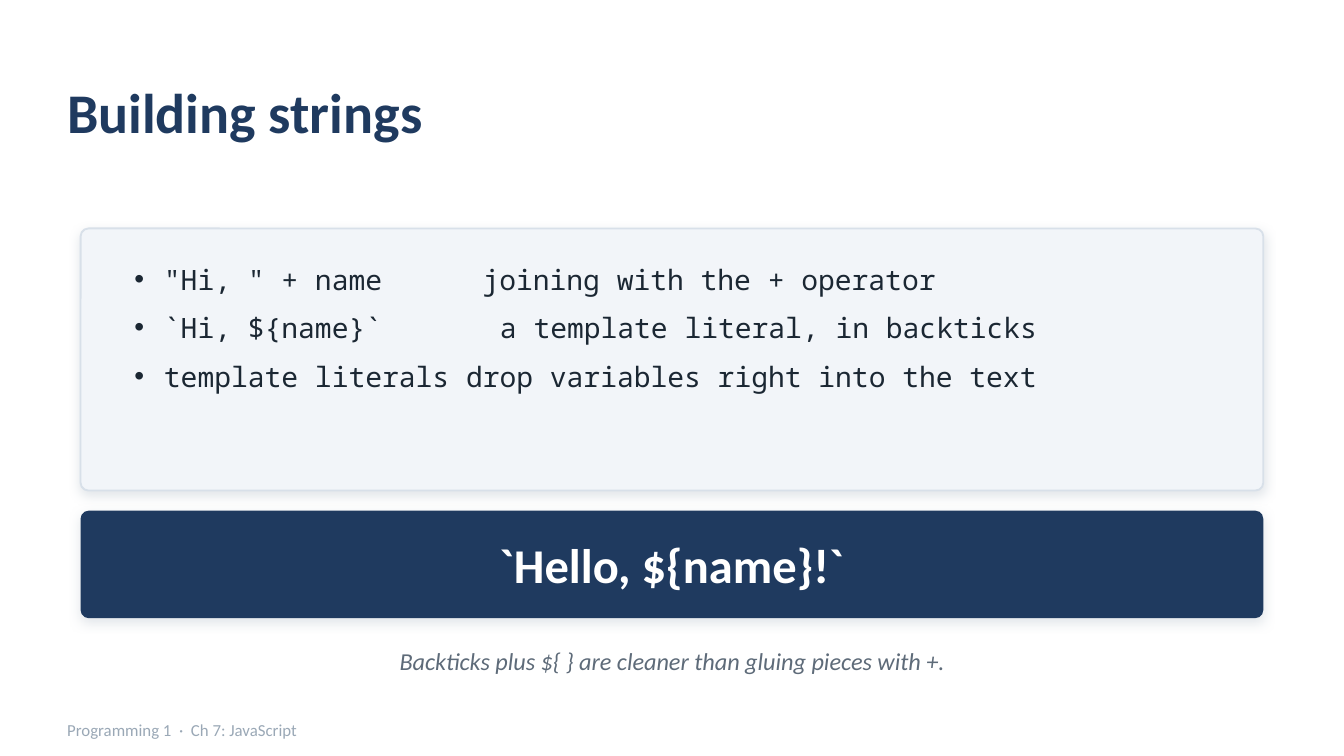
"""Build the slide on joining strings and template literals."""
from dataclasses import dataclass, field

from lxml import etree
from pptx import Presentation
from pptx import util as u
from pptx.dml import color
from pptx.enum import shapes, text
from pptx.oxml import ns

COLORS = {
    "navy": "1F3A5F",
    "panel": "F2F5F9",
    "edge": "D8E0E9",
    "ink": "1B2733",
    "white": "FFFFFF",
    "slate": "5E6B79",
    "mist": "9AA8B6",
}
SLIDE_WIDTH = 10
SLIDE_HEIGHT = SLIDE_WIDTH * 9 / 16
LEFT, WIDTH = 0.6, 8.8
INDENT = 0.22


@dataclass
class Area:
    left: float
    top: float
    width: float
    height: float

    def lengths(self) -> list:
        return [u.Inches(n) for n in (self.left, self.top, self.width, self.height)]


@dataclass
class Style:
    size: int
    color: str
    name: str = "Calibri"
    bold: bool = False
    italic: bool = False


@dataclass
class Panel:
    area: Area
    fill: str
    corner: float
    edge: str = ""


@dataclass
class Label:
    words: str
    area: Area
    style: Style
    align: text.PP_ALIGN = text.PP_ALIGN.LEFT


@dataclass
class Bullet:
    words: str
    tabs: list = field(default_factory=list)


TITLE = Label("Building strings", Area(0.5, 0.4, 9, 0.85), Style(30, "navy", bold=True))
LIST_AREA = Area(0.9, 1.9, 8.2, 1.6)
CODE = Style(15, "ink", "Noto Sans Mono")
BULLETS = [
    Bullet('"Hi, " + name\tjoining with the + operator', [2.59]),
    Bullet("`Hi, ${name}`\ta template literal, in backticks", [2.72]),
    Bullet("template literals drop variables right into the text"),
]
PANELS = [
    Panel(Area(LEFT, 1.7, WIDTH, 1.95), "panel", 0.03, "edge"),
    Panel(Area(LEFT, 3.8, WIDTH, 0.8), "navy", 0.075),
]
LABELS = [
    Label("`Hello, ${name}!`", Area(LEFT, 3.83, WIDTH, 0.74),
          Style(26, "white", bold=True), text.PP_ALIGN.CENTER),
    Label("Backticks plus ${ } are cleaner than gluing pieces with +.",
          Area(LEFT, 4.72, WIDTH, 0.4), Style(13, "slate", italic=True), text.PP_ALIGN.CENTER),
    Label("Programming 1  ·  Ch 7: JavaScript", Area(0.5, 5.3, 8, 0.26), Style(9, "mist")),
]


def rgb(name: str) -> color.RGBColor:
    return color.RGBColor.from_string(COLORS[name])


def assign(target, values: dict) -> None:
    for key, value in values.items():
        setattr(target, key, value)


def place(box, area: Area) -> None:
    assign(box, dict(zip(("left", "top", "width", "height"), area.lengths())))


def add_span(para, words: str, style: Style) -> None:
    span = para.add_run()
    span.text = words
    assign(span.font, {"size": u.Pt(style.size), "name": style.name,
                       "bold": style.bold, "italic": style.italic})
    span.font.color.rgb = rgb(style.color)


def add_node(parent, tag: str, **values):
    return etree.SubElement(parent, ns.qn(tag), {key: str(value) for key, value in values.items()})


def add_shadow(box) -> None:
    effects = add_node(box.element.spPr, "a:effectLst")
    shadow = add_node(effects, "a:outerShdw", blurRad=u.Pt(6), dist=u.Pt(2),
                      dir=90 * 60000, algn="bl", rotWithShape=0)
    tint = add_node(shadow, "a:srgbClr", val=COLORS["mist"])
    add_node(tint, "a:alpha", val=28000)


def draw_panel(page, panel: Panel) -> None:
    box = page.shapes.add_shape(shapes.MSO_SHAPE.ROUNDED_RECTANGLE, *panel.area.lengths())
    box.adjustments[0] = panel.corner
    box.fill.solid()
    box.fill.fore_color.rgb = rgb(panel.fill)
    if panel.edge:
        box.line.color.rgb = rgb(panel.edge)
        box.line.width = u.Pt(1)
    else:
        box.line.fill.background()
    add_shadow(box)


def write_label(box, label: Label) -> None:
    frame = box.text_frame
    assign(frame, {"word_wrap": True, "auto_size": text.MSO_AUTO_SIZE.NONE,
                   "vertical_anchor": text.MSO_ANCHOR.MIDDLE, "margin_left": 0,
                   "margin_right": 0, "margin_top": 0, "margin_bottom": 0})
    para = frame.paragraphs[0]
    para.alignment = label.align
    add_span(para, label.words, label.style)


def write_bullets(body, bullets: list[Bullet]) -> None:
    frame = body.text_frame
    assign(frame, {"word_wrap": True, "auto_size": text.MSO_AUTO_SIZE.NONE,
                   "vertical_anchor": text.MSO_ANCHOR.TOP})
    for index, bullet in enumerate(bullets):
        para = frame.add_paragraph() if index else frame.paragraphs[0]
        props = para._p.get_or_add_pPr()
        props.set("marL", str(u.Inches(INDENT)))
        props.set("indent", str(-u.Inches(INDENT)))
        add_node(props, "a:buChar", char="•")
        if bullet.tabs:
            stops = add_node(props, "a:tabLst")
            for stop in bullet.tabs:
                add_node(stops, "a:tab", pos=u.Inches(stop), algn="l")
        assign(para, {"space_before": u.Pt(0), "space_after": u.Pt(8)})
        add_span(para, bullet.words, CODE)


def main() -> None:
    deck = Presentation()
    assign(deck, {"slide_width": u.Inches(SLIDE_WIDTH), "slide_height": u.Inches(SLIDE_HEIGHT)})
    page = deck.slides.add_slide(deck.slide_layouts[1])
    title, body = page.placeholders
    place(title, TITLE.area)
    write_label(title, TITLE)
    for panel in PANELS:
        draw_panel(page, panel)
    place(body, LIST_AREA)
    write_bullets(body, BULLETS)
    body.element.getparent().append(body.element)
    for label in LABELS:
        write_label(page.shapes.add_textbox(*label.area.lengths()), label)
    deck.save("out.pptx")


if __name__ == "__main__":
    main()
